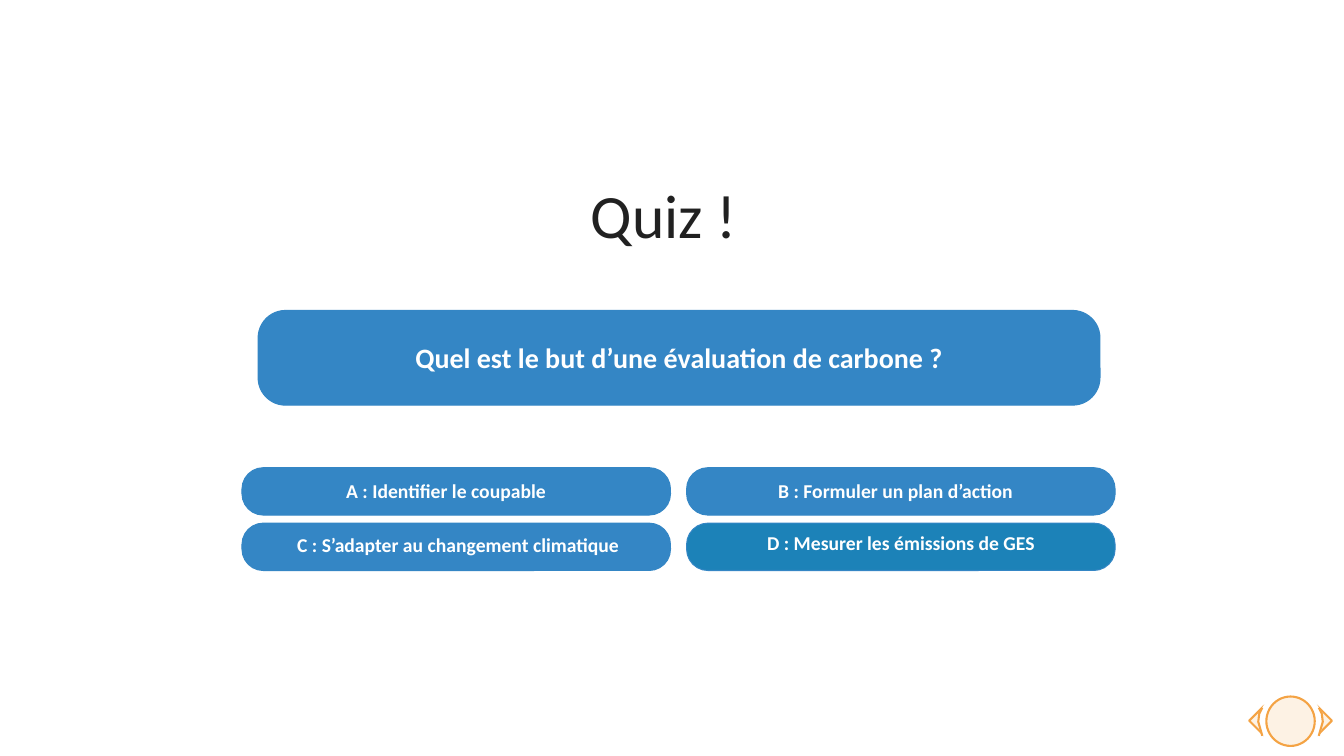
from lxml import etree
from pptx import Presentation
from pptx.dml.color import RGBColor
from pptx.enum.shapes import MSO_SHAPE
from pptx.enum.text import MSO_ANCHOR, PP_ALIGN
from pptx.oxml.ns import qn
from pptx.util import Inches, Pt

# Content
TITLE = "Quiz !"
QUESTION = "Quel est le but d’une évaluation de carbone ?"
# text, text box (left, top, width), alignment, pill fill; row by row
ANSWERS = [
    ("A : Identifier le coupable", (2.3, 4.7, 4.25), PP_ALIGN.CENTER, "3486C5"),
    ("B : Formuler un plan d’action", (7.62, 4.7, 4.13), PP_ALIGN.LEFT, "3486C5"),
    ("C : S’adapter au changement climatique", (2.42, 5.24, 4.25), PP_ALIGN.CENTER, "3486C5"),
    ("D : Mesurer les émissions de GES", (7.51, 5.22, 3.46), PP_ALIGN.LEFT, "1C82B8"),
]
BLUE, ORANGE, WHITE, INK = "3486C5", "F4A344", "FFFFFF", "212121"

# Answer grid
GRID_LEFT, GRID_TOP, COL_STEP, ROW_STEP = 2.4, 4.64, 4.41, 0.55
PILL_W, PILL_H = 4.25, 0.47

# Navigation badge, symmetric about its centre
BADGE_X, BADGE_TOP, BADGE_W, BADGE_H = 12.8, 6.91, 0.48, 0.49
ARROW_W, ARROW_H, ARROW_TOP = 0.32, 0.3, 7.0
ARC = [(0.28, 7.3), (0.3, 7.23), (0.32, 7.16), (0.31, 7.08), (0.28, 7.02)]

prs = Presentation()
prs.slide_width, prs.slide_height = Inches(13.33), Inches(7.5)
slide = prs.slides.add_slide(prs.slide_layouts[6])
shapes = slide.shapes


def rgb(value):
    return RGBColor.from_string(value)


def style_line(sp, color, width):
    sp.shadow.inherit = False
    sp.line.color.rgb = rgb(color)
    sp.line.width = Pt(width)


def add_box(kind, box, fill, line, width, alpha=None, adj=None):
    sp = shapes.add_shape(kind, *map(Inches, box))
    sp.fill.solid()
    sp.fill.fore_color.rgb = rgb(fill)
    style_line(sp, line, width)
    if alpha:
        clr = sp._element.spPr.find(qn("a:solidFill"))[0]
        etree.SubElement(clr, qn("a:alpha")).set("val", str(alpha * 1000))
    if adj:
        sp.adjustments[0] = adj
    return sp


def write(sp, text, size, color, bold=True, align=PP_ALIGN.CENTER, anchor=MSO_ANCHOR.MIDDLE):
    tf = sp.text_frame
    tf.word_wrap = True
    tf.vertical_anchor = anchor
    p = tf.paragraphs[0]
    p.text = text
    p.alignment = align
    font = p.runs[0].font
    font.name, font.size, font.bold = "Calibri", Pt(size), bold
    font.color.rgb = rgb(color)


# Badge: side arrows, each cut by a white disc edged with an arc
for side in (-1, 1):
    arrow_x = BADGE_X + side * 0.25 - ARROW_W / 2
    arrow = add_box(MSO_SHAPE.STRIPED_RIGHT_ARROW,
                    (arrow_x, ARROW_TOP, ARROW_W, ARROW_H), ORANGE, ORANGE, 1.5, alpha=14)
    arrow.rotation = 180 if side < 0 else 0
    add_box(MSO_SHAPE.OVAL, (BADGE_X + side * 0.07 - BADGE_W / 2, BADGE_TOP, BADGE_W, BADGE_H),
            WHITE, WHITE, 1.5)
    points = [(Inches(BADGE_X + side * dx), Inches(y)) for dx, y in ARC]
    builder = shapes.build_freeform(*points[0])
    builder.add_line_segments(points[1:], close=False)
    arc = builder.convert_to_shape()
    arc.fill.background()
    style_line(arc, ORANGE, 1.5)
add_box(MSO_SHAPE.OVAL, (BADGE_X - BADGE_W / 2, BADGE_TOP, BADGE_W, BADGE_H),
        ORANGE, ORANGE, 1.5, alpha=14)

# Question
question = add_box(MSO_SHAPE.ROUNDED_RECTANGLE, (2.56, 3.08, 8.35, 0.94), BLUE, BLUE, 0.75, adj=0.29)
write(question, QUESTION, 20, WHITE)

# Answers
for i, (text, (left, top, width), align, fill) in enumerate(ANSWERS):
    row, col = divmod(i, 2)
    pill = (GRID_LEFT + col * COL_STEP, GRID_TOP + row * ROW_STEP, PILL_W, PILL_H)
    add_box(MSO_SHAPE.ROUNDED_RECTANGLE, pill, fill, BLUE, 0.75, adj=0.45)
    label = shapes.add_textbox(*map(Inches, (left, top, width, PILL_H)))
    write(label, text, 14, WHITE, align=align, anchor=MSO_ANCHOR.TOP)

# Title
title = shapes.add_textbox(*map(Inches, (1.58, 1.59, 10.01, 1.07)))
write(title, TITLE, 44, INK, bold=False)

prs.save("out.pptx")
